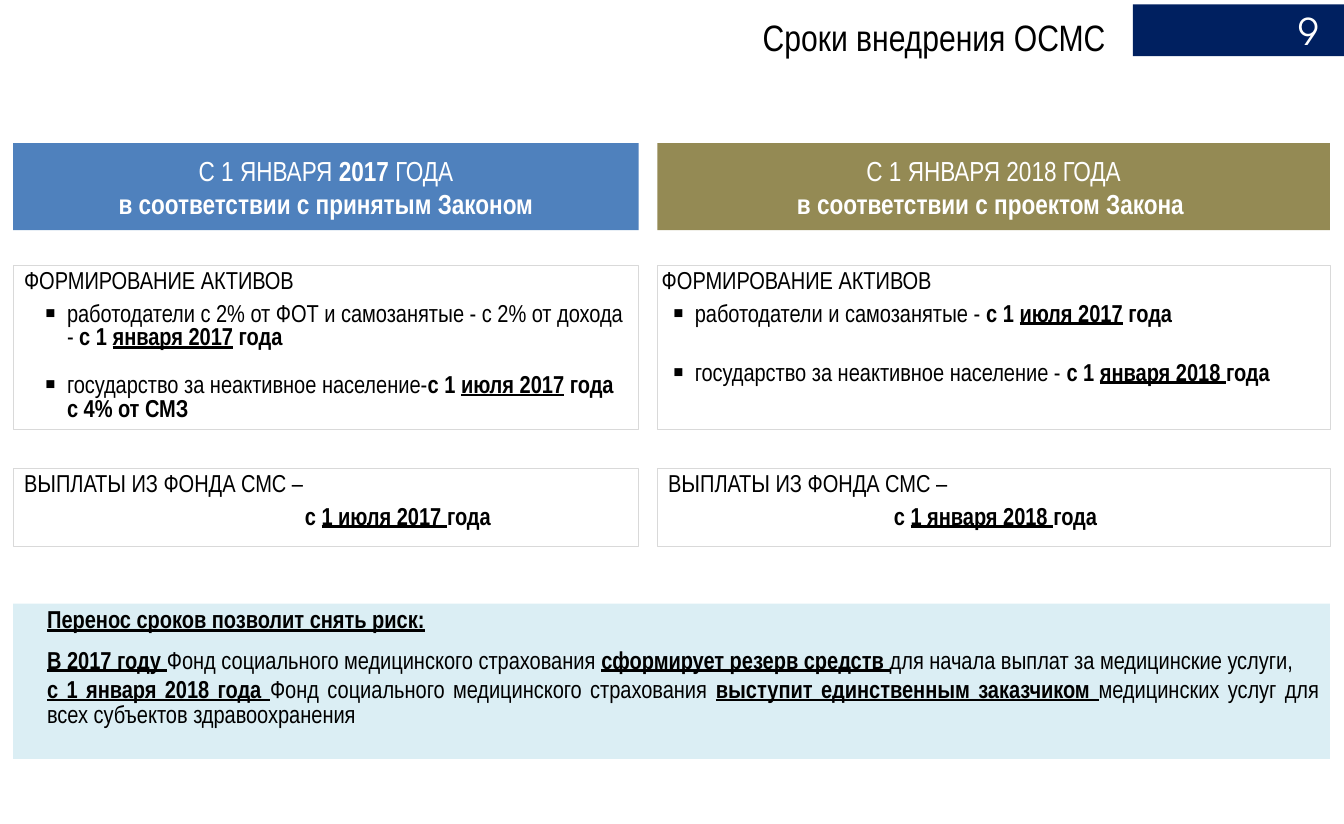
from lxml import etree
from pptx import Presentation
from pptx.dml.color import RGBColor
from pptx.enum.shapes import MSO_SHAPE
from pptx.enum.text import MSO_ANCHOR, MSO_AUTO_SIZE, PP_ALIGN
from pptx.oxml.ns import qn
from pptx.util import Emu, Inches, Pt

RECT = MSO_SHAPE.RECTANGLE
TOP, MIDDLE = MSO_ANCHOR.TOP, MSO_ANCHOR.MIDDLE
LEFT, CENTER, RIGHT, JUST = PP_ALIGN.LEFT, PP_ALIGN.CENTER, PP_ALIGN.RIGHT, PP_ALIGN.JUSTIFY

THEME = {
    "font": "Arial Narrow", "digit": "TeX Gyre Adventor",
    "white": "FFFFFF", "black": "000000", "navy": "002060",
    "blue": "4F81BD", "olive": "948A54", "pale": "DBEEF4", "edge": "D9D9D9",
    "title": 24, "head": 18, "body": 16,
}

# Grid: (left, width) of columns and (top, height) of rows, in inches
COLS = [(0.12, 5.68), (5.97, 6.11)]
FULL = (0.12, 11.96)
HEAD, ASSETS, PAY, RISK = (1.3, 0.79), (2.41, 1.49), (4.25, 0.71), (5.48, 1.41)


def box(col, row, fill=None, edge=None, pad=(0.1, 0.05, 0.1, 0.05), anchor=TOP):
    """Add a plain rectangle and return its text frame."""
    shape = slide.shapes.add_shape(
        RECT, *[Inches(n) for n in (col[0], row[0], col[1], row[1])])
    shape.shadow.inherit = False
    if fill:
        shape.fill.solid()
        shape.fill.fore_color.rgb = RGBColor.from_string(THEME[fill])
    else:
        shape.fill.background()
    if edge:
        shape.line.color.rgb = RGBColor.from_string(THEME[edge])
        shape.line.width = Pt(0.5)
    else:
        shape.line.fill.background()
    frame = shape.text_frame
    frame.word_wrap = True
    frame.vertical_anchor = anchor
    (frame.margin_left, frame.margin_top,
     frame.margin_right, frame.margin_bottom) = [Inches(n) for n in pad]
    return frame


def write(frame, lines, size="body", color="black", font="font", align=LEFT, space=1.0):
    """Each line: (runs, left indent, points after, bullet); run: (text, b and u flags)."""
    for i, (runs, indent, after, bullet) in enumerate(lines):
        para = frame.paragraphs[0] if i == 0 else frame.add_paragraph()
        para.alignment = align
        para.line_spacing = space
        para.space_after = Pt(after)
        props = para._p.get_or_add_pPr()
        props.set("marL", str(Inches(indent)))
        props.set("indent", str(Inches(-0.2 if bullet else 0)))
        if bullet:
            etree.SubElement(props, qn("a:buSzPct")).set("val", "130000")
            etree.SubElement(props, qn("a:buFont")).set("typeface", "Arial")
            etree.SubElement(props, qn("a:buChar")).set("char", "▪")
        for text, flags in runs:
            run = para.add_run()
            run.text = text
            run.font.name = THEME[font]
            run.font.size = Pt(THEME[size])
            run.font.color.rgb = RGBColor.from_string(THEME[color])
            run.font.bold = "b" in flags
            run.font.underline = "u" in flags


deck = Presentation()
deck.slide_width, deck.slide_height = Emu(11161713), Emu(6840538)
slide = deck.slides.add_slide(deck.slide_layouts[5])

# Title and page number
title = slide.shapes.title
title.left, title.top, title.width, title.height = [
    Inches(n) for n in (1.96, 0.08, 8.18, 0.5)]
title.text_frame.auto_size = MSO_AUTO_SIZE.NONE
title.text_frame.vertical_anchor = TOP
write(title.text_frame, [([("Сроки внедрения ОСМС", "")], 0, 0, False)],
      size="title", align=RIGHT)
write(box((10.29, 1.92), (0.04, 0.47), "navy", pad=(0.1, 0.06, 0.23, 0.05), anchor=MIDDLE),
      [([("9", "")], 0, 0, False)],
      size="title", color="white", font="digit", align=RIGHT)

# Two plans: the adopted law and the draft law
PLANS = [
    {
        "fill": "blue", "pad": 0.1, "hang": 0.39, "gaps": (6, 16), "shift": 2.55,
        "date": [("С 1 ЯНВАРЯ ", ""), ("2017", "b"), (" ГОДА", "")],
        "law": "в соответствии с принятым Законом",
        "firms": [("работодатели с 2% от ФОТ и самозанятые - c 2% от дохода - ", ""),
                  ("с 1 ", "b"), ("января 2017", "bu"), (" года", "b")],
        "state": [("государство за неактивное население-", ""), ("с 1 ", "b"),
                  ("июля 2017", "bu"), (" года с 4% от СМЗ", "b")],
        "pay": "1 июля 2017 ",
    },
    {
        "fill": "olive", "pad": 0.04, "hang": 0.3, "gaps": (6, 23), "shift": 2.05,
        "date": [("С 1 ЯНВАРЯ 2018 ГОДА", "")],
        "law": "в соответствии с проектом Закона ",
        "firms": [("работодатели и самозанятые -", ""), (" с 1 ", "b"),
                  ("июля 2017", "bu"), (" года", "b")],
        "state": [("государство за неактивное население -", ""), (" с 1 ", "b"),
                  ("января 2018 ", "bu"), ("года", "b")],
        "pay": "1 января 2018 ",
    },
]
for col, plan in zip(COLS, PLANS):
    write(box(col, HEAD, plan["fill"], pad=(0.08, 0.04, 0.08, 0.04), anchor=MIDDLE),
          [(plan["date"], 0, 0, False), ([(plan["law"], "b")], 0, 0, False)],
          size="head", color="white", align=CENTER)
    side, hang, (near, far) = plan["pad"], plan["hang"], plan["gaps"]
    write(box(col, ASSETS, edge="edge", pad=(side, 0.05, side, 0.05)),
          [([("ФОРМИРОВАНИЕ АКТИВОВ", "")], 0, near, False),
           (plan["firms"], hang, far, True),
           (plan["state"], hang, 0, True)], space=0.8)
    write(box(col, PAY, edge="edge"),
          [([("ВЫПЛАТЫ ИЗ ФОНДА СМС –", "")], 0, 6, False),
           ([("с ", "b"), (plan["pay"], "bu"), ("года", "b")], plan["shift"], 6, False)],
          space=0.8)

# Why the dates move
FUND = ("Фонд социального медицинского страхования ", "")
write(box(FULL, RISK, "pale"), [
    ([("Перенос сроков позволит снять риск:", "bu")], 0.21, 10, False),
    ([("В 2017 году ", "bu"), FUND, ("сформирует резерв средств ", "bu"),
      ("для начала выплат за медицинские услуги, ", "")], 0.21, 3, False),
    ([("с 1 января 2018 года ", "bu"), FUND, ("выступит единственным заказчиком ", "bu"),
      ("медицинских услуг для всех субъектов здравоохранения", "")], 0.21, 3, False),
], align=JUST, space=0.85)

deck.save("out.pptx")
